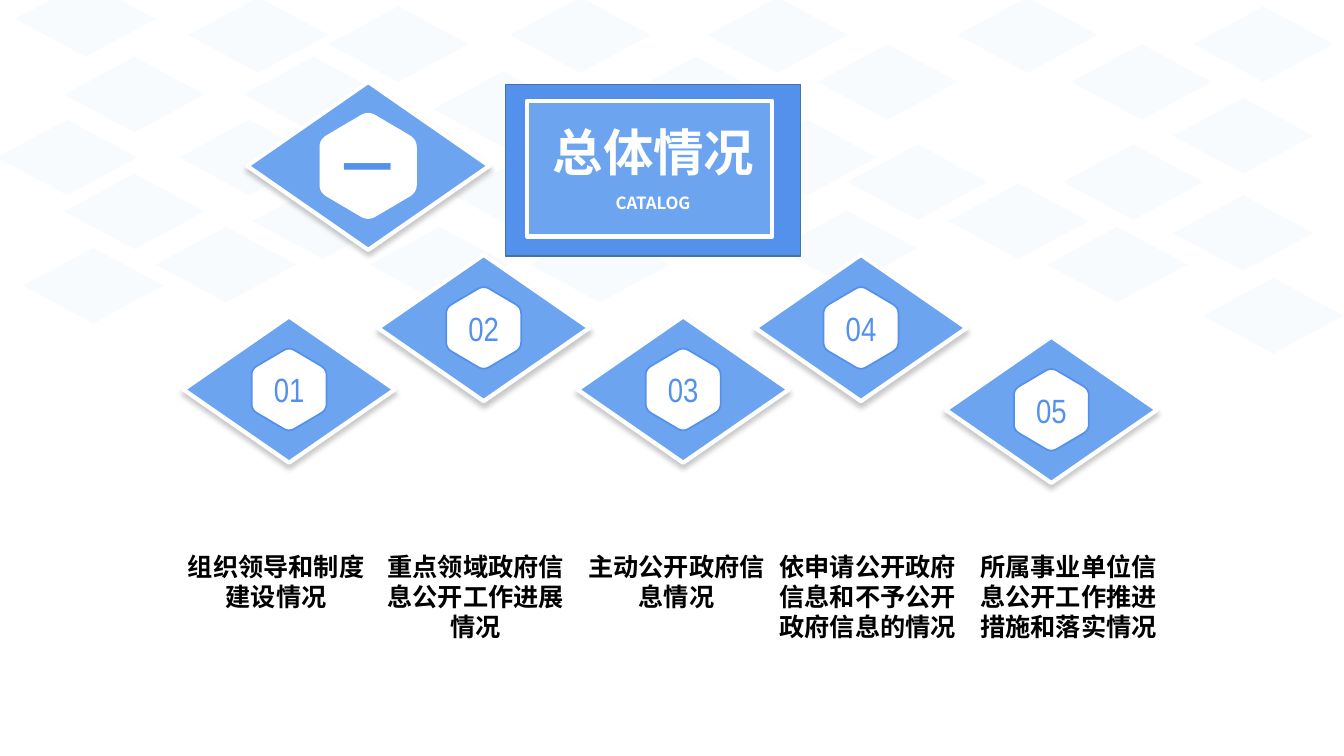
"""Build the section contents slide with numbered diamonds."""
from lxml import etree
from pptx import Presentation
from pptx import util as u
from pptx.dml import color as dml
from pptx.enum import shapes, text
from pptx.oxml import ns

BLUE, DEEP_BLUE, EDGE_BLUE, PALE_BLUE = "6CA4F0", "5391ED", "43739E", "DEEBF7"
WHITE, BLACK = "FFFFFF", "000000"
CJK_FONT = "Noto Sans CJK SC"
DIAMOND, RECTANGLE = shapes.MSO_SHAPE.DIAMOND, shapes.MSO_SHAPE.RECTANGLE

TILE_SIZE = (100, 54)
TILES = [
    (852.5, 4.5), (838, 70), (765.5, 31.5), (759.5, 103), (677.5, 131),
    (605.5, 103), (584, 31.5), (684, -2), (505.5, -2), (364.5, -2),
    (309.5, 51), (234.5, 4.5), (526.5, 85.5), (447, 40.5), (555, 150.5),
    (748, 162), (838, 139.5), (378.5, 162), (324, 112.5), (264, 162),
    (234.5, 85.5), (180.5, 131), (174, 40.5), (134.5, -2), (128, 85.5),
    (111.5, 162), (46, 124), (46, 40.5), (11, -13.5), (859.5, 198.5),
    (16.5, 177), (-2, 85.5),
]
TOPICS = [
    ("01", 131, 226, 129.5, "组织领导和制度建设情况"),
    ("02", 270, 182, 272, "重点领域政府信息公开工作进展情况"),
    ("03", 412.5, 226, 415.5, "主动公开政府信息情况"),
    ("04", 539.5, 182, 552, "依申请公开政府信息和不予公开政府信息的情况"),
    ("05", 675.5, 240.5, 695.5, "所属事业单位信息公开工作推进措施和落实情况"),
]
HEXAGON = [(0.5, -0.02), (1, 0.25), (1, 0.75), (0.5, 1.02), (0, 0.75), (0, 0.25)]


def rgb(value):
    """Turn a hex string into a colour."""
    return dml.RGBColor.from_string(value)


def add_child(parent, tag, **attributes):
    """Append a DrawingML element with attributes."""
    child = etree.SubElement(parent, ns.qn(tag))
    for name, value in attributes.items():
        child.set(name, str(value))
    return child


def style(shape, fill, line=None, width=1):
    """Give a shape its fill and outline and drop the theme shadow."""
    shape.fill.solid()
    shape.fill.fore_color.rgb = rgb(fill)
    if line:
        shape.line.color.rgb = rgb(line)
        shape.line.width = u.Pt(width)
    else:
        shape.line.fill.background()
    shape.shadow.inherit = False
    return shape


def add_box(parent, kind, box, fill, **outline):
    """Add a styled preset shape in a box given in points."""
    shape = parent.add_shape(kind, *map(u.Pt, box))
    return style(shape, fill, **outline)


def write(shape, words, *, size, color, font="Arial", bold=False,
          anchor=text.MSO_ANCHOR.TOP, inset=(0, 3.6)):
    """Set centred text in a shape with one format."""
    frame = shape.text_frame
    frame.word_wrap = True
    frame.auto_size = text.MSO_AUTO_SIZE.NONE
    frame.vertical_anchor = anchor
    frame.margin_left = frame.margin_right = u.Pt(inset[0])
    frame.margin_top = frame.margin_bottom = u.Pt(inset[1])
    paragraph = frame.paragraphs[0]
    paragraph.alignment = text.PP_ALIGN.CENTER
    run = paragraph.add_run()
    run.text = words
    run.font.size = u.Pt(size)
    run.font.bold = bold
    run.font.name = font
    run.font.color.rgb = rgb(color)
    add_child(run.font._element, "a:ea", typeface=CJK_FONT)


def add_text(slide, box, words, **text_format):
    """Add a text box in a box given in points."""
    shape = slide.shapes.add_textbox(*map(u.Pt, box))
    write(shape, words, **text_format)


def add_drop_shadow(shape):
    """Cast a soft shadow straight down."""
    effects = shape._element.spPr.find(ns.qn("a:effectLst"))
    shadow = add_child(effects, "a:outerShdw", blurRad=u.Pt(4), dist=u.Pt(3),
                       dir=5400000, algn="t", rotWithShape=0)
    add_child(add_child(shadow, "a:srgbClr", val=BLACK), "a:alpha", val=22000)


def rounded_hexagon(cut=0.15, steps=6):
    """Return unit points of a hexagon with curved corners."""
    points = []
    for index, corner in enumerate(HEXAGON):
        before, after = HEXAGON[index - 1], HEXAGON[(index + 1) % len(HEXAGON)]
        for step in range(steps + 1):
            t = step / steps
            back, ahead = cut * (1 - t) ** 2, cut * t ** 2
            points.append(tuple(
                c + back * (b - c) + ahead * (a - c)
                for b, c, a in zip(before, corner, after)))
    return points


def add_background(slide):
    """Scatter translucent diamonds over the top of the slide."""
    group = slide.shapes.add_group_shape()
    for position in TILES:
        tile = add_box(group.shapes, DIAMOND, position + TILE_SIZE, PALE_BLUE)
        fill = tile._element.spPr.find(ns.qn("a:solidFill"))
        add_child(fill[0], "a:alpha", val=20000)


def add_badge(slide, box, label, hexagon_width, outline=None, **text_format):
    """Draw a shadowed diamond with a labelled hexagon at its centre."""
    left, top, width, height = box
    diamond = add_box(slide.shapes, DIAMOND, box, BLUE, line=WHITE, width=3)
    add_drop_shadow(diamond)
    hexagon_height = hexagon_width * 1.09
    x = left + (width - hexagon_width) / 2
    y = top + (height - hexagon_height) / 2
    points = [(u.Pt(x + px * hexagon_width), u.Pt(y + py * hexagon_height))
              for px, py in rounded_hexagon()]
    builder = slide.shapes.build_freeform(*points[0])
    builder.add_line_segments(points[1:])
    hexagon = style(builder.convert_to_shape(), WHITE, outline, 1.25)
    write(hexagon, label, color=DEEP_BLUE, font="Arial Narrow",
          anchor=text.MSO_ANCHOR.MIDDLE, inset=(0, 0), **text_format)


def add_title_panel(slide, box):
    """Draw the framed panel with the title and its subtitle."""
    left, top, width, height = box
    add_box(slide.shapes, RECTANGLE, box, DEEP_BLUE, line=EDGE_BLUE)
    frame = (left + 15.5, top + 11.5, width - 36, height - 25.5)
    add_box(slide.shapes, RECTANGLE, frame, BLUE, line=WHITE, width=3)
    title = slide.shapes.title
    title.left, title.top = u.Pt(left + 18), u.Pt(top + 22.5)
    title.width, title.height = u.Pt(width - 35.5), u.Pt(94)
    slide.shapes._spTree.append(title._element)
    write(title, "总体情况", size=36, color=WHITE, bold=True)
    add_text(slide, (left + 28, top + 73.5, width - 56, 21.5), "CATALOG",
             size=12, color=WHITE, font=CJK_FONT, bold=True)


def add_topics(slide):
    """Place the numbered diamonds and the captions below them."""
    for number, left, top, caption_left, caption in TOPICS:
        add_badge(slide, (left, top, 151, 104.5), number, 53.5,
                  outline=DEEP_BLUE, size=24)
        add_text(slide, (caption_left, 390, 135.5, 73), caption,
                 size=18, color=BLACK, bold=True)


def main():
    """Build and save the presentation."""
    presentation = Presentation()
    presentation.slide_width, presentation.slide_height = u.Pt(960), u.Pt(540)
    slide = presentation.slides.add_slide(presentation.slide_layouts[5])
    add_background(slide)
    add_topics(slide)
    add_title_panel(slide, (361, 60.5, 211, 122.5))
    add_badge(slide, (176.5, 58.5, 173, 120), "一", 69.5, size=36, bold=True)
    presentation.save("out.pptx")


if __name__ == "__main__":
    main()
